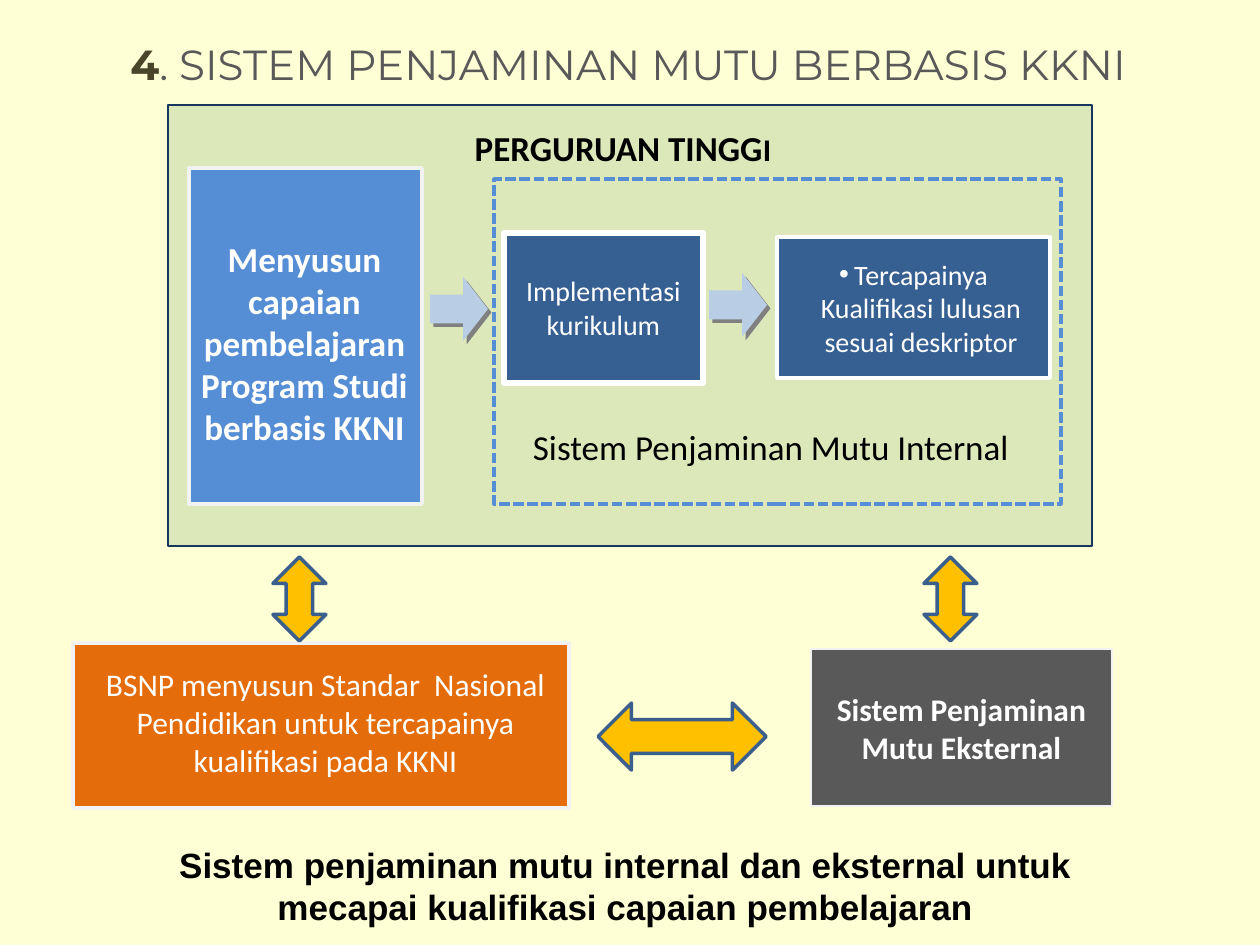
"""Build the slide on quality assurance based on KKNI."""
from lxml import etree
from pptx import Presentation
from pptx.dml.color import RGBColor
from pptx.enum.dml import MSO_LINE
from pptx.enum.shapes import MSO_SHAPE
from pptx.enum.text import MSO_ANCHOR, PP_ALIGN
from pptx.oxml.ns import qn
from pptx.util import Emu, Pt

RECT = MSO_SHAPE.RECTANGLE
UP = MSO_SHAPE.UP_ARROW
UP_DOWN = MSO_SHAPE.UP_DOWN_ARROW
LEFT_RIGHT = MSO_SHAPE.LEFT_RIGHT_ARROW
DASH = MSO_LINE.SQUARE_DOT
TOP, MIDDLE = MSO_ANCHOR.TOP, MSO_ANCHOR.MIDDLE
CENTER = PP_ALIGN.CENTER

PX = 914400 / 126
THEME = {
    "page": "FFFFD6", "panel": "DDE8BA", "navy": "17375E", "blue": "558ED5",
    "deep": "376092", "pale": "B9CDE5", "orange": "E46C0A", "gold": "FFC000",
    "edge": "3A5F8C", "grey": "595959", "light": "F2F2F2", "white": "FFFFFF",
    "black": "000000", "olive": "4A452A", "shadow": "808080",
    "title": 24, "large": 20, "medium": 18, "small": 16,
    "body": "Calibri", "heading": "Montserrat", "caption": "Arial",
}

BOXES = [
    ((168, 105, 924, 441), "panel", "navy", 1),
    ((73, 643, 496, 165), "orange", "light", 2.25),
    ((504, 233, 199, 150), "deep", "white", 3),
    ((811, 649, 301, 157), "grey", "light", 1.5),
    ((189, 168, 233, 336), "blue", "light", 2.25),
    ((777, 237, 273, 141), "deep", "white", 2.25),
]
STEP_ARROWS = [(427, 280), (706, 276)]
STEP_SIZE = (64, 58)
LINK_ARROWS = [
    (UP_DOWN, (273, 557, 53, 84)),
    (UP_DOWN, (924, 557, 53, 84)),
    (LEFT_RIGHT, (598, 703, 168, 67)),
]
INTERNAL_FRAME = (494, 179, 567, 325)

TEXTS = [
    ((45, 32, 1166, 63), TOP, "heading", False, [
        ("4", "title", "olive", True),
        (". SISTEM PENJAMINAN MUTU BERBASIS KKNI", "title", "grey", False)]),
    ((420, 116, 406, 64), MIDDLE, "body", False, [
        ("PERGURUAN TINGG", "large", "black", True),
        ("I", "medium", "black", True)]),
    ((189, 181, 231, 323), MIDDLE, "body", False, [
        ("Menyusun capaian pembelajaran Program Studi berbasis KKNI",
         "large", "white", True)]),
    ((504, 249, 199, 117), MIDDLE, "body", False, [
        ("Implementasi kurikulum", "small", "white", False)]),
    ((777, 237, 273, 141), MIDDLE, "body", True, [
        ("Tercapainya Kualifikasi lulusan sesuai deskriptor",
         "small", "white", False)]),
    ((494, 399, 554, 95), MIDDLE, "body", False, [
        ("Sistem Penjaminan Mutu Internal", "large", "black", False)]),
    ((84, 643, 483, 158), MIDDLE, "body", False, [
        ("BSNP menyusun Standar  Nasional Pendidikan untuk tercapainya "
         "kualifikasi pada KKNI", "medium", "white", False)]),
    ((811, 649, 301, 157), MIDDLE, "body", False, [
        ("Sistem Penjaminan Mutu Eksternal", "medium", "white", True)]),
    ((95, 837, 1061, 97), MIDDLE, "caption", False, [
        ("Sistem penjaminan mutu internal dan eksternal untuk mecapai "
         "kualifikasi capaian pembelajaran", "large", "black", True)]),
]


def px(value):
    return Emu(round(value * PX))


def color(name):
    return RGBColor.from_string(THEME[name])


def add_shape(s, kind, box, fill=None, line=None, width=1):
    sp = s.shapes.add_shape(kind, *map(px, box))
    sp.shadow.inherit = False
    if fill:
        sp.fill.solid()
        sp.fill.fore_color.rgb = color(fill)
    else:
        sp.fill.background()
    if line:
        sp.line.color.rgb = color(line)
        sp.line.width = Pt(width)
    else:
        sp.line.fill.background()
    return sp


def add_step_arrow(s, corner):
    sp = add_shape(s, UP, corner + STEP_SIZE, "pale")
    sp.rotation = 90
    sp.adjustments[0], sp.adjustments[1] = 0.45, 0.43
    effects = sp._element.spPr.find(qn("a:effectLst"))
    shadow = etree.SubElement(effects, qn("a:outerShdw"), dist=str(Pt(2.8)),
                              dir="2700000", algn="ctr", rotWithShape="0")
    etree.SubElement(shadow, qn("a:srgbClr"), val=THEME["shadow"])


def add_bullet(p):
    pPr = p._p.get_or_add_pPr()
    pPr.set("marL", str(px(15)))
    pPr.set("indent", str(px(-15)))
    etree.SubElement(pPr, qn("a:buFont"), typeface=THEME["caption"])
    etree.SubElement(pPr, qn("a:buChar"), char="•")


def add_text(s, box, anchor, font, bullet, runs):
    tf = s.shapes.add_textbox(*map(px, box)).text_frame
    tf.word_wrap = True
    tf.vertical_anchor = anchor
    tf.margin_left = tf.margin_right = px(11)
    p = tf.paragraphs[0]
    p.alignment = CENTER
    if bullet:
        add_bullet(p)
    for text, size, ink, bold in runs:
        r = p.add_run()
        r.text = text
        r.font.name = THEME[font]
        r.font.size = Pt(THEME[size])
        r.font.color.rgb = color(ink)
        r.font.bold = bold


def main():
    prs = Presentation()
    prs.slide_width, prs.slide_height = px(1260), px(945)
    s = prs.slides.add_slide(prs.slide_layouts[6])
    s.background.fill.solid()
    s.background.fill.fore_color.rgb = color("page")
    for box, fill, line, width in BOXES:
        add_shape(s, RECT, box, fill, line, width)
    for corner in STEP_ARROWS:
        add_step_arrow(s, corner)
    for kind, box in LINK_ARROWS:
        add_shape(s, kind, box, "gold", "edge", 2)
    frame = add_shape(s, RECT, INTERNAL_FRAME, None, "blue", 2)
    frame.line.dash_style = DASH
    for item in TEXTS:
        add_text(s, *item)
    prs.save("out.pptx")


if __name__ == "__main__":
    main()
